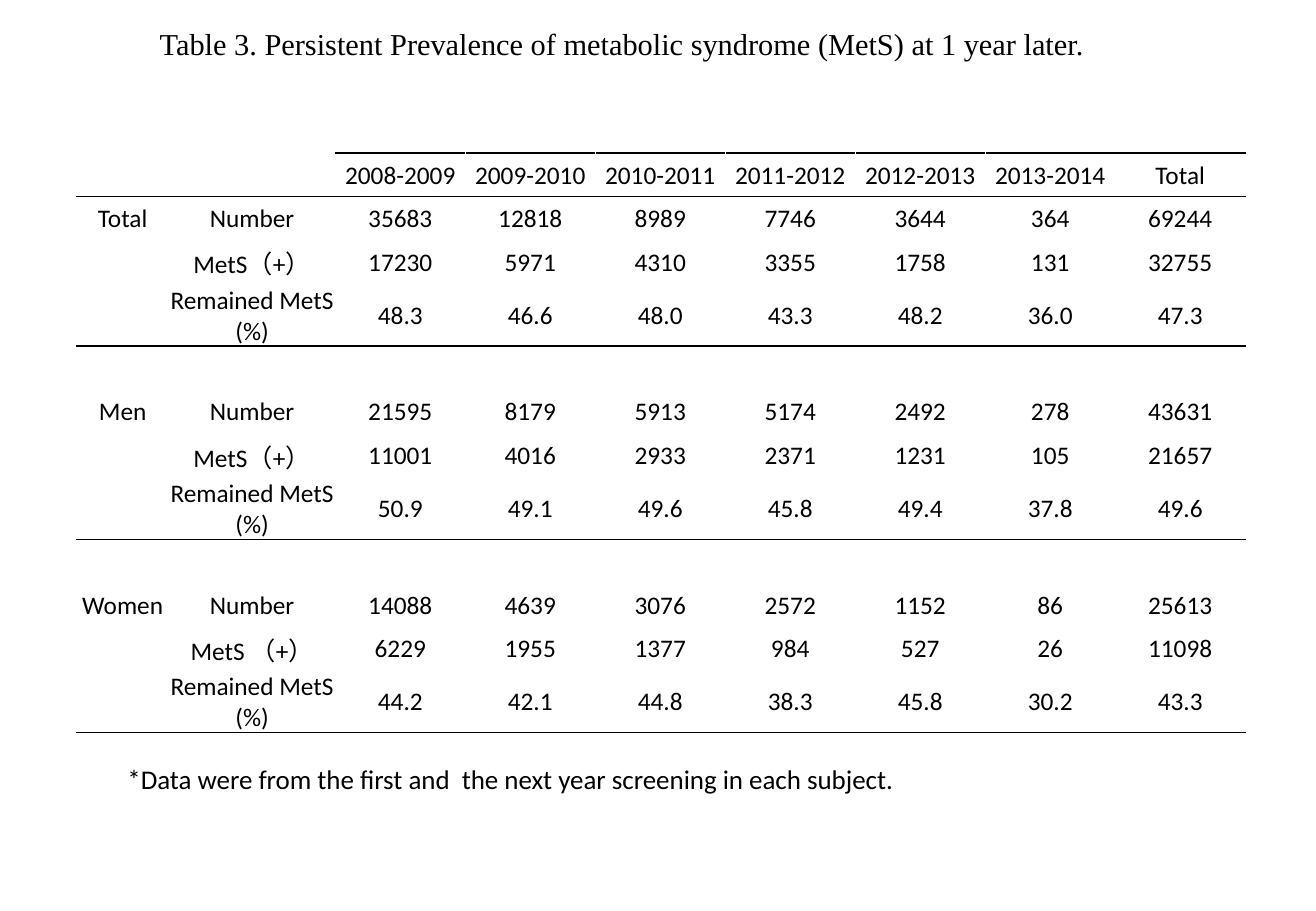
from lxml import etree
from pptx import Presentation, util as u
from pptx.dml.color import RGBColor
from pptx.enum import text
from pptx.oxml import ns

BLACK = RGBColor(0, 0, 0)
WHITE = RGBColor(255, 255, 255)
WIDTH, HEIGHT = u.Inches(10.83), u.Inches(7.5)
ROW = u.Inches(0.36)
COLS = [0.76, 1.37] + [1.07] * 7
RULES = {0, 1, 4, 8, 12}

YEARS = ["2008-2009", "2009-2010", "2010-2011", "2011-2012",
         "2012-2013", "2013-2014", "Total"]
BLANK = [""] * len(COLS)
GROUPS = [
    ("Total", "MetS（+）",
     "35683 12818 8989 7746 3644 364 69244",
     "17230 5971 4310 3355 1758 131 32755",
     "48.3 46.6 48.0 43.3 48.2 36.0 47.3"),
    ("Men", "MetS（+）",
     "21595 8179 5913 5174 2492 278 43631",
     "11001 4016 2933 2371 1231 105 21657",
     "50.9 49.1 49.6 45.8 49.4 37.8 49.6"),
    ("Women", "MetS （+）",
     "14088 4639 3076 2572 1152 86 25613",
     "6229 1955 1377 984 527 26 11098",
     "44.2 42.1 44.8 38.3 45.8 30.2 43.3"),
]

rows = [BLANK, ["", ""] + YEARS]
for name, mets, count, cases, rate in GROUPS:
    if name != "Total":
        rows.append(BLANK)
    rows += [[name, "Number"] + count.split(),
             ["", mets] + cases.split(),
             ["", "Remained MetS (%)"] + rate.split()]


def style(par, size, face):
    par.font.size = u.Pt(size)
    par.font.name = face
    par.font.color.rgb = BLACK


def border(cell, side, color):
    line = etree.SubElement(cell._tc.get_or_add_tcPr(),
                            ns.qn("a:ln" + side), w=str(u.Pt(1)))
    fill = etree.SubElement(line, ns.qn("a:solidFill"))
    etree.SubElement(fill, ns.qn("a:srgbClr"), val=str(color))


deck = Presentation()
deck.slide_width, deck.slide_height = WIDTH, HEIGHT
slide = deck.slides.add_slide(deck.slide_layouts[5])

title = slide.shapes.title
title.left, title.top = 0, u.Inches(0.16)
title.width, title.height = u.Inches(10.24), u.Inches(0.4)
frame = title.text_frame
frame.text = "Table 3. Persistent Prevalence of metabolic syndrome (MetS) at 1 year later."
frame.word_wrap = True
frame.auto_size = text.MSO_AUTO_SIZE.SHAPE_TO_FIT_TEXT
frame.vertical_anchor = text.MSO_ANCHOR.TOP
frame.paragraphs[0].alignment = text.PP_ALIGN.CENTER
style(frame.paragraphs[0], 18, "Times New Roman")

table = slide.shapes.add_table(
    len(rows), len(COLS), u.Inches(0.63), u.Inches(0.9),
    u.Inches(sum(COLS)), ROW * len(rows)).table
table.first_row = table.horz_banding = False
for col, width in zip(table.columns, COLS):
    col.width = u.Inches(width)

for r, row in enumerate(rows):
    table.rows[r].height = ROW
    for c, value in enumerate(row):
        cell = table.cell(r, c)
        cell.text = value
        cell.vertical_anchor = text.MSO_ANCHOR.MIDDLE
        cell.margin_left = cell.margin_right = cell.margin_top = u.Inches(0.01)
        cell.margin_bottom = 0
        par = cell.text_frame.paragraphs[0]
        par.alignment = text.PP_ALIGN.CENTER
        style(par, 15, "Calibri")
        for side, edge in (("L", None), ("R", None), ("T", r - 1), ("B", r)):
            ruled = edge in RULES and (edge > 0 or c > 1)
            border(cell, side, BLACK if ruled else WHITE)
        cell.fill.background()

table.cell(0, 0).merge(table.cell(0, 1))
table.cell(0, 2).merge(table.cell(0, 7))

note = slide.shapes.add_textbox(u.Inches(0.95), u.Inches(6.23),
                                u.Inches(6.59), u.Inches(0.37))
frame = note.text_frame
frame.text = "*Data were from the first and  the next year screening in each subject."
frame.word_wrap = False
frame.auto_size = text.MSO_AUTO_SIZE.SHAPE_TO_FIT_TEXT
style(frame.paragraphs[0], 16, "Calibri")

deck.save("out.pptx")
